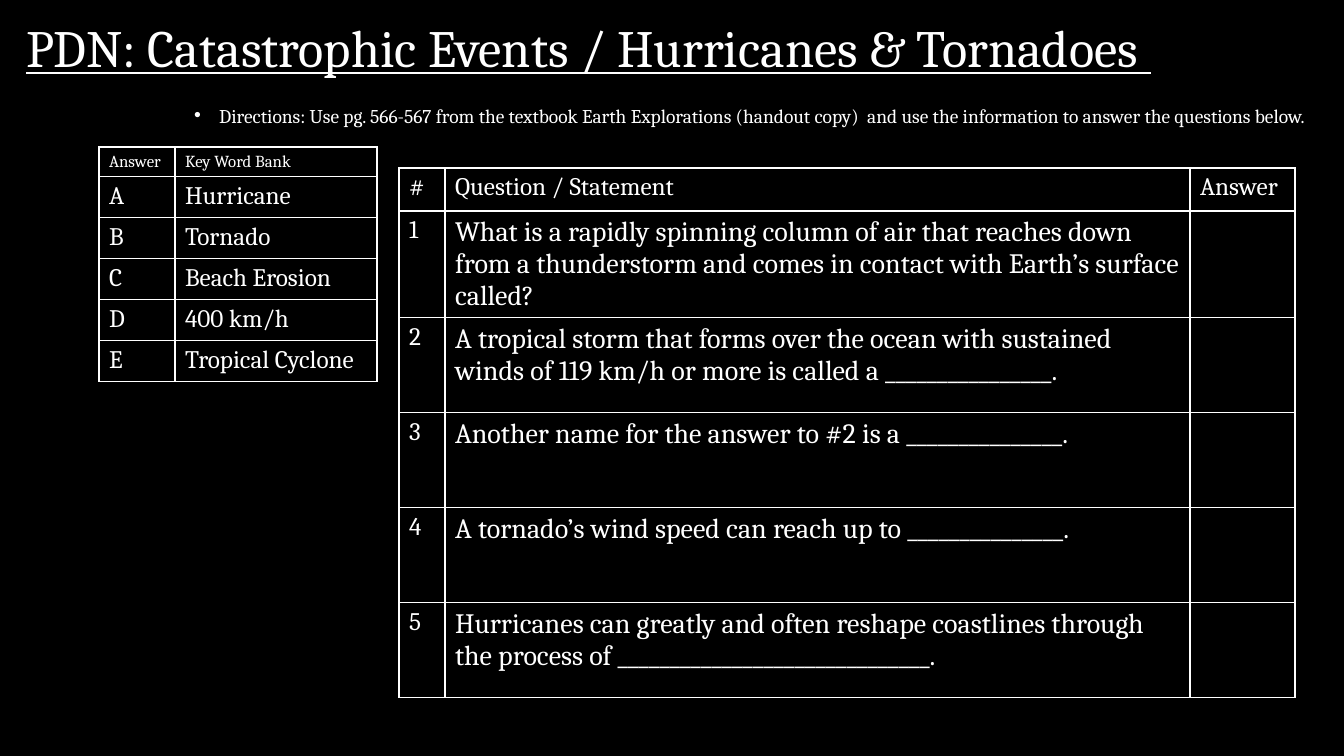
from lxml.etree import SubElement
from pptx import Presentation
from pptx.dml.color import RGBColor
from pptx.enum.text import MSO_ANCHOR as Anchor, MSO_AUTO_SIZE as AutoSize, PP_ALIGN as Align
from pptx.oxml.ns import qn
from pptx.util import Emu, Pt

EMU_PER_PX = 914400 / 100.8
FONT = "Cambria"
BLACK, WHITE = "000000", "FFFFFF"

KEY_WORDS = [
    ("Answer", "Key Word Bank"),
    ("A", "Hurricane"),
    ("B", "Tornado"),
    ("C", "Beach Erosion"),
    ("D", "400 km/h"),
    ("E", "Tropical Cyclone"),
]
STATEMENTS = [
    "What is a rapidly spinning column of air that reaches down from a thunderstorm "
    "and comes in contact with Earth’s surface called?",
    "A tropical storm that forms over the ocean with sustained winds of 119 km/h "
    "or more is called a ________________.",
    "Another name for the answer to #2 is a _______________.",
    "A tornado’s wind speed can reach up to _______________.",
    "Hurricanes can greatly and often reshape coastlines through the process of "
    "______________________________.",
]
QUESTIONS = [("#", "Question / Statement", "Answer")] + [
    (str(number), statement, "") for number, statement in enumerate(STATEMENTS, 1)
]


def px(length):
    return Emu(round(length * EMU_PER_PX))


def color(hex_code):
    return RGBColor.from_string(hex_code)


def add_run(paragraph, text, size, underline=None):
    run = paragraph.add_run()
    run.text = text
    run.font.name = FONT
    run.font.size = Pt(size)
    run.font.underline = underline
    run.font.color.rgb = color(WHITE)


def place(holder, left, top, width, height, anchor):
    """Move a placeholder and return its first paragraph."""
    holder.left, holder.top = px(left), px(top)
    holder.width, holder.height = px(width), px(height)
    frame = holder.text_frame
    frame.word_wrap = True
    frame.auto_size = AutoSize.NONE
    frame.vertical_anchor = anchor
    return frame.paragraphs[0]


def add_bullet(paragraph, indent):
    properties = paragraph._p.get_or_add_pPr()
    properties.set("marL", str(px(indent)))
    properties.set("indent", str(px(-indent)))
    SubElement(properties, qn("a:buFont"), typeface="Arial")
    SubElement(properties, qn("a:buChar"), char="•")


def add_borders(cell):
    properties = cell._tc.get_or_add_tcPr()
    for side in ("lnL", "lnR", "lnT", "lnB"):
        line = SubElement(properties, qn(f"a:{side}"), w=str(Pt(1)))
        fill = SubElement(line, qn("a:solidFill"))
        SubElement(fill, qn("a:srgbClr"), val=WHITE)


def add_grid(slide, left, top, widths, heights, rows, size_of):
    """Add a bordered table; size_of(row, column) gives the text size."""
    grid = slide.shapes.add_table(
        len(rows), len(widths), px(left), px(top), px(sum(widths)), px(sum(heights))
    ).table
    grid.first_row = grid.horz_banding = False
    for column, width in zip(grid.columns, widths):
        column.width = px(width)
    for row, height in zip(grid.rows, heights):
        row.height = px(height)
    for r, texts in enumerate(rows):
        for c, text in enumerate(texts):
            cell = grid.cell(r, c)
            add_borders(cell)
            cell.fill.solid()
            cell.fill.fore_color.rgb = color(BLACK)
            if text:
                add_run(cell.text_frame.paragraphs[0], text, size_of(r, c))


def main():
    deck = Presentation()
    deck.slide_width, deck.slide_height = px(1344), px(756)
    slide = deck.slides.add_slide(deck.slide_layouts[1])
    slide.background.fill.solid()
    slide.background.fill.fore_color.rgb = color(BLACK)

    # Title
    heading = place(slide.shapes.title, 16, 0, 1328, 105, Anchor.MIDDLE)
    heading.alignment = Align.LEFT
    heading.line_spacing = 0.8
    add_run(heading, "PDN: Catastrophic Events / Hurricanes & Tornadoes ", 37.4, True)

    # Directions
    directions = place(slide.placeholders[1], 0, 105, 1317, 41, Anchor.TOP)
    add_bullet(directions, 25)
    directions.alignment = Align.RIGHT
    directions.line_spacing = 0.7
    directions.space_before = Pt(0)
    add_run(
        directions,
        "Directions: Use pg. 566-567 from the textbook Earth Explorations (handout copy)  "
        "and use the information to answer the questions below.",
        13.9,
    )

    # Key word bank
    add_grid(slide, 99, 147, [76, 202], [24] + [41] * 5, KEY_WORDS,
             lambda r, c: 18 if r else 12)

    # Questions
    add_grid(slide, 399, 168, [46, 745, 105], [43] + [95] * 5, QUESTIONS,
             lambda r, c: 20 if r and c == 1 else 18)

    deck.save("out.pptx")


if __name__ == "__main__":
    main()
